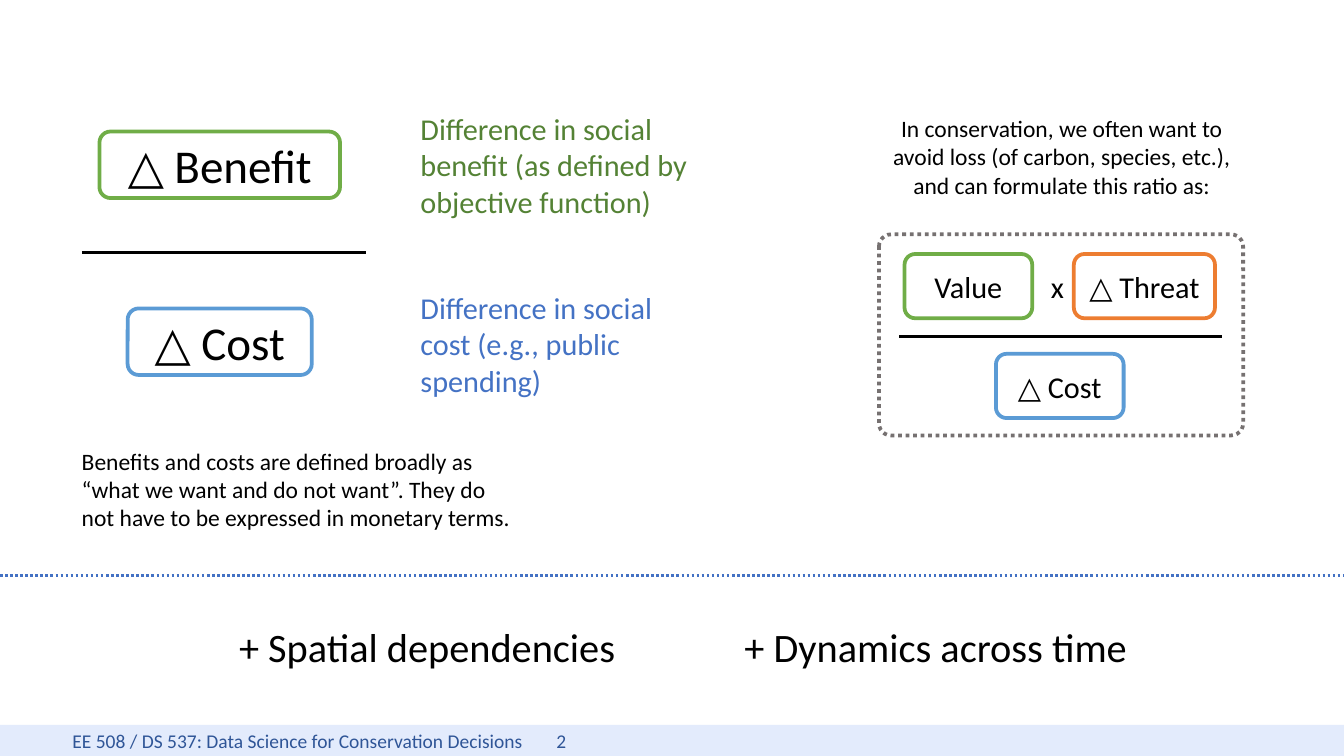
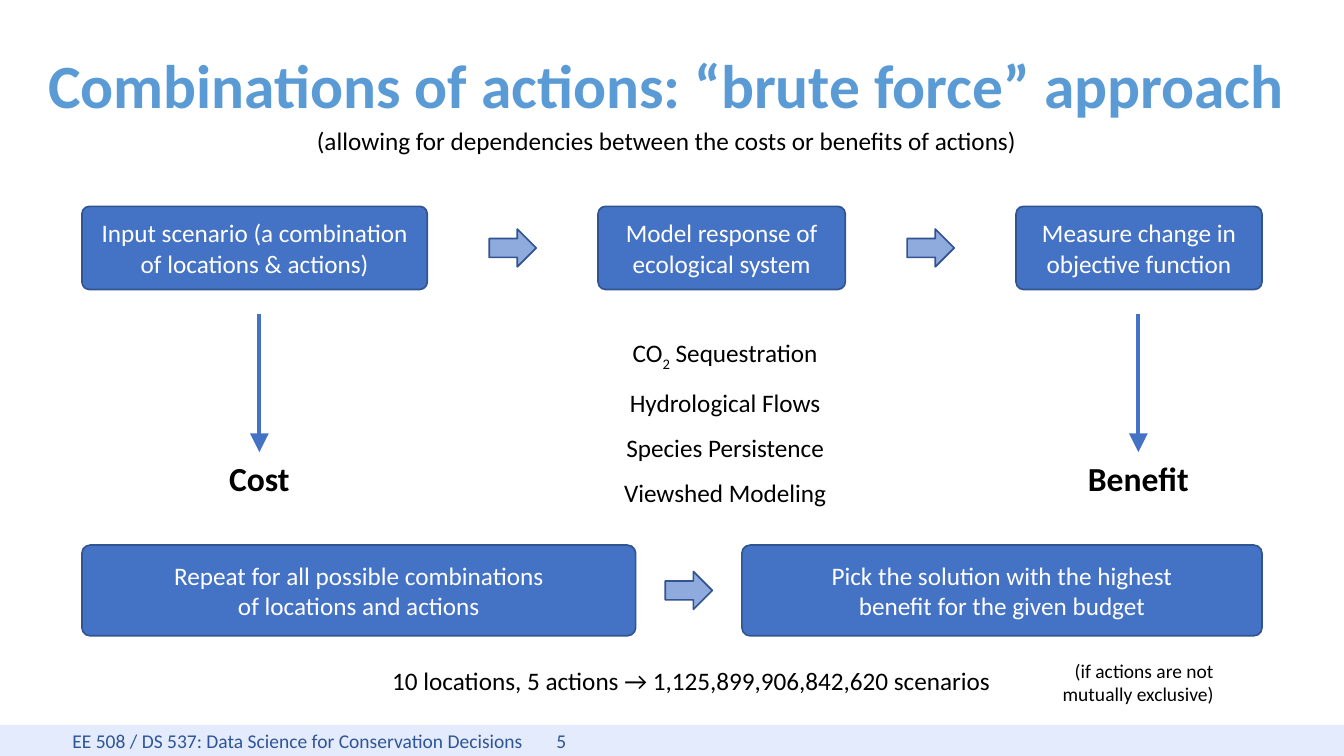
from lxml.etree import SubElement
from pptx import Presentation
from pptx.dml.color import RGBColor
from pptx.enum.dml import MSO_LINE
from pptx.enum.shapes import MSO_CONNECTOR, MSO_SHAPE
from pptx.enum.text import MSO_ANCHOR, PP_ALIGN
from pptx.oxml.ns import qn
from pptx.util import Inches, Pt

COLORS = {
    "black": "000000", "white": "FFFFFF", "gray": "767171",
    "green": "70AD47", "dark green": "548235", "orange": "ED7D31",
    "sky": "5B9BD5", "blue": "4472C4", "edge": "325491",
    "arrow": "8FAADC", "band": "E3EBFC", "footer": "2F5597",
}
FONT = "Calibri"
FOOTER = "EE 508 / DS 537: Data Science for Conservation Decisions"
LEFT, CENTER, RIGHT = PP_ALIGN.LEFT, PP_ALIGN.CENTER, PP_ALIGN.RIGHT

deck = Presentation()
deck.slide_width, deck.slide_height = Inches(11.11), Inches(6.25)
COLUMN, ROW = deck.slide_width / 100, deck.slide_height / 100


def add_box(page, area, text="", size=15, color="black", align=LEFT, kind=None,
            fill=None, edge=None, weight=2.25, radius=None, bold=False, spacing=None, wrap=True):
    left, top, width, height = area
    place = int(left * COLUMN), int(top * ROW), int(width * COLUMN), int(height * ROW)
    if kind is None:
        box = page.shapes.add_textbox(*place)
    else:
        box = page.shapes.add_shape(kind, *place)
        box.shadow.inherit = False
        box.text_frame.vertical_anchor = MSO_ANCHOR.MIDDLE
        if radius is not None:
            box.adjustments[0] = radius
        if fill:
            box.fill.solid()
            box.fill.fore_color.rgb = RGBColor.from_string(COLORS[fill])
        else:
            box.fill.background()
        if edge:
            box.line.color.rgb = RGBColor.from_string(COLORS[edge])
            box.line.width = Pt(weight)
        else:
            box.line.fill.background()
    frame = box.text_frame
    frame.word_wrap = wrap
    paragraphs = [[text]] if isinstance(text, str) else text
    for index, runs in enumerate(paragraphs):
        para = frame.add_paragraph() if index else frame.paragraphs[0]
        para.alignment = align
        if spacing:
            para.line_spacing = spacing
        for run in runs:
            for number, piece in enumerate(run.split("\n")):
                if number:
                    para.add_line_break()
                if piece:
                    span = para.add_run()
                    span.text = piece
                    span.font.name, span.font.size, span.font.bold = FONT, Pt(size), bold
                    span.font.color.rgb = RGBColor.from_string(COLORS[color])
    return box


def add_line(page, start, end, color="black", weight=2.25, dash=None, arrow=False):
    line = page.shapes.add_connector(
        MSO_CONNECTOR.STRAIGHT, int(start[0] * COLUMN), int(start[1] * ROW),
        int(end[0] * COLUMN), int(end[1] * ROW))
    line.line.color.rgb = RGBColor.from_string(COLORS[color])
    line.line.width = Pt(weight)
    if dash:
        line.line.dash_style = dash
    if arrow:
        SubElement(line.line._get_or_add_ln(), qn("a:tailEnd"), type="triangle", w="lg", len="lg")
    SubElement(line._element.spPr, qn("a:effectLst"))


pages = []
for page_number in (2, 5):
    page = deck.slides.add_slide(deck.slide_layouts[6])
    band = add_box(page, (0, 95.9, 100, 4.1), f"\t{FOOTER}\t{page_number}", 11.6, "footer",
                   kind=MSO_SHAPE.RECTANGLE, fill="band")
    tabs = SubElement(band.text_frame.paragraphs[0]._p.get_or_add_pPr(), qn("a:tabLst"))
    for stop in (0.5, 4.5):
        SubElement(tabs, qn("a:tab"), pos=str(Inches(stop)), algn="l")
    pages.append(page)
ratio_page, approach_page = pages

add_box(ratio_page, (65.4, 31, 27.1, 26.6), kind=MSO_SHAPE.ROUNDED_RECTANGLE,
        edge="gray", radius=0.06).line.dash_style = MSO_LINE.ROUND_DOT
for area, text, size, edge in (
    ((7.4, 17.4, 17.9, 8.8), "△ Benefit", 28, "green"),
    ((9.5, 40.8, 13.7, 8.8), "△ Cost", 28, "sky"),
    ((67.3, 33.6, 9.5, 8.5), "Value", 18, "green"),
    ((79.9, 33.6, 10.5, 8.5), "△ Threat", 18, "orange"),
    ((74.1, 46.8, 9.5, 8.5), "△ Cost", 18, "sky"),
):
    add_box(ratio_page, area, text, size, align=CENTER, kind=MSO_SHAPE.ROUNDED_RECTANGLE,
            fill="white", edge=edge, wrap=False)
add_box(ratio_page, (77.3, 34.7, 2.1, 6.4), "x", 18, align=CENTER, wrap=False)
add_line(ratio_page, (6.1, 33.4), (27.2, 33.4))
add_line(ratio_page, (66.9, 44.5), (90.9, 44.5))
add_line(ratio_page, (0, 76.1), (100, 76.1), "blue", 1.5, MSO_LINE.ROUND_DOT)

for area, text, size, color, align in (
    ((30.4, 13.8, 22.8, 16.2), "Difference in social benefit (as defined by objective function)",
     18, "dark green", LEFT),
    ((30.4, 37.5, 19.2, 16.2), "Difference in social cost (e.g., public spending)",
     18, "blue", LEFT),
    ((64.1, 14.3, 29.8, 13), "In conservation, we often want to avoid loss "
     "(of carbon, species, etc.), and can formulate this ratio as:", 14, "black", CENTER),
    ((5.2, 58.3, 34.6, 13), "Benefits and costs are defined broadly as “what we want and "
     "do not want”. They do not have to be expressed in monetary terms.", 14, "black", LEFT),
    ((16.9, 81.5, 31.5, 8), "+ Spatial dependencies", 24, "black", LEFT),
    ((54.5, 81.5, 31.5, 8), "+ Dynamics across time", 24, "black", LEFT),
):
    add_box(ratio_page, area, text, size, color, align)

title = add_box(approach_page, (2.7, 4.7, 95.3, 13.9),
                "Combinations of actions: “brute force” approach",
                36.6, "sky", bold=True, spacing=0.9)
title.text_frame.vertical_anchor = MSO_ANCHOR.MIDDLE
add_box(approach_page, (3, 15.8, 93.2, 5.6),
        "(allowing for dependencies between the costs or benefits of actions)", align=CENTER)

ARROW_WIDTH, ARROW_HEIGHT = 3.5, 5
for top, height, steps in (
    (27.3, 11, ((6.1, 25.7, "Input scenario (a combination of locations & actions)"),
                (44.5, 18.4, "Model response of ecological system"),
                (75.6, 18.3, "Measure change in objective function"))),
    (72.1, 12, ((6.1, 41.2, "Repeat for all possible combinations\nof locations and actions"),
                (55.2, 38.7, "Pick the solution with the highest\nbenefit for the given budget"))),
):
    previous_right = None
    for left, width, text in steps:
        add_box(approach_page, (left, top, width, height), text, color="white", align=CENTER,
                kind=MSO_SHAPE.ROUNDED_RECTANGLE, fill="blue", edge="edge", weight=1, radius=0.09)
        if previous_right is not None:
            arrow_left = (previous_right + left - ARROW_WIDTH) / 2
            arrow_top = top + (height - ARROW_HEIGHT) / 2
            add_box(approach_page, (arrow_left, arrow_top, ARROW_WIDTH, ARROW_HEIGHT),
                    kind=MSO_SHAPE.RIGHT_ARROW, fill="arrow", edge="edge", weight=1)
        previous_right = left + width

for center, text in ((19.3, "Cost"), (84.7, "Benefit")):
    add_line(approach_page, (center, 41.5), (center, 59.8), "blue", arrow=True)
    add_box(approach_page, (center - 5.1, 59.8, 10.2, 7), text, 20, align=CENTER, bold=True)

models = add_box(approach_page, (45, 41.6, 17.9, 25.3),
                 [["CO", "2", " Sequestration"], ["Hydrological Flows"],
                  ["Species Persistence"], ["Viewshed Modeling"]], align=CENTER, spacing=1.5)
subscript = models.text_frame.paragraphs[0].runs[1]
subscript._r.get_or_add_rPr().set("baseline", "-25000")

add_box(approach_page, (28.3, 87.2, 47.3, 5.6),
        "10 locations, 5 actions → 1,125,899,906,842,620 scenarios")
add_box(approach_page, (77.1, 86.4, 14.1, 7.8),
        [["(if actions are not"], ["mutually exclusive)"]], 11.6, align=RIGHT)

deck.save("out.pptx")
